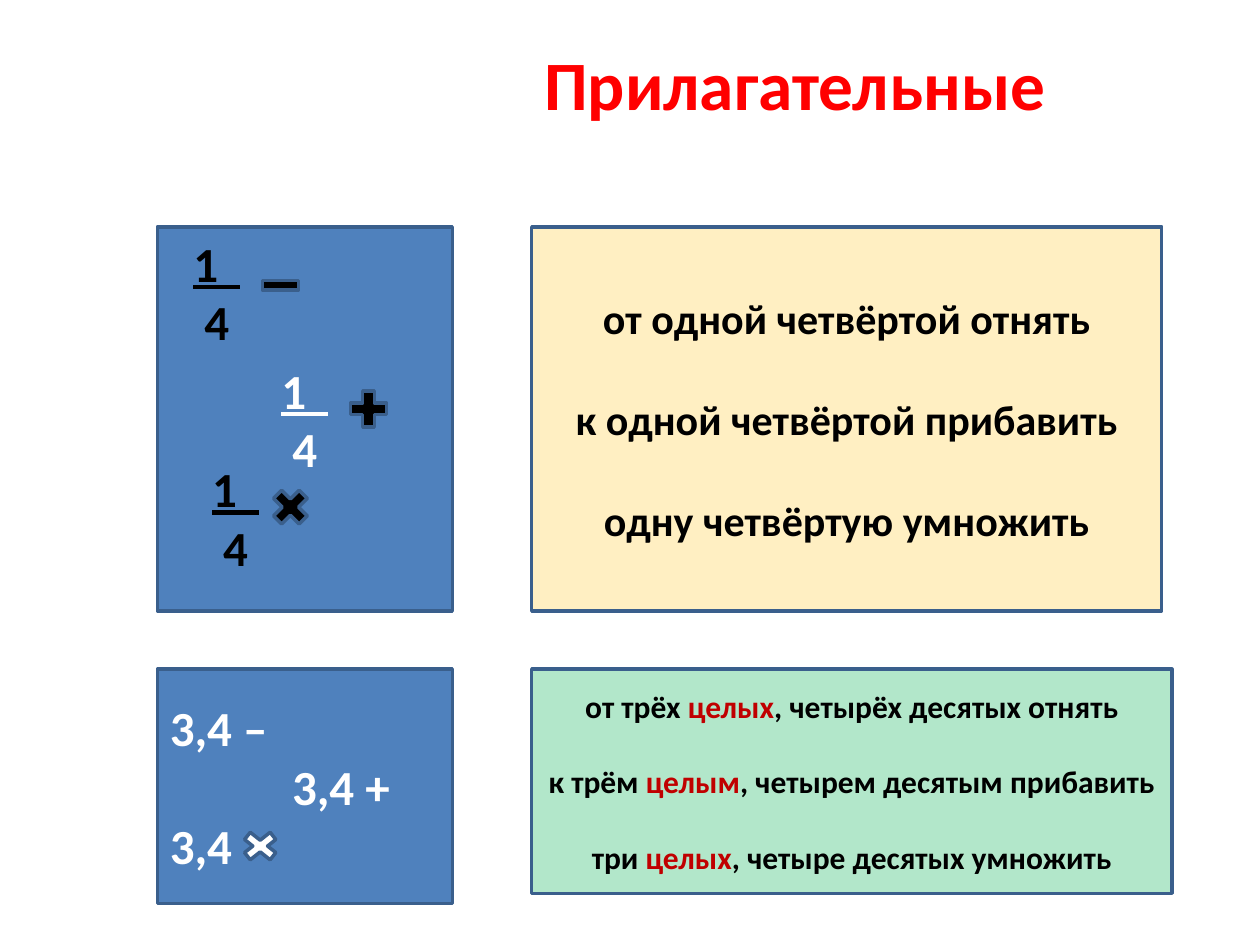
from dataclasses import dataclass

from lxml.etree import SubElement
from pptx import Presentation
from pptx.dml.color import RGBColor
from pptx.enum.shapes import MSO_SHAPE as Shape
from pptx.enum.text import MSO_ANCHOR as Anchor, PP_ALIGN as Align
from pptx.oxml.ns import qn
from pptx.util import Inches, Pt


@dataclass(frozen=True)
class Theme:
    """Colours, font and type sizes of the slide."""
    font: str = "Calibri"
    heading: str = "FF0000"
    panel: str = "4F81BD"
    outline: str = "3A5F8C"
    ink: str = "000000"
    light: str = "FFFFFF"
    accent: str = "C00000"
    fraction_tint: str = "FFC000"
    decimal_tint: str = "00B050"
    title_size: float = 39.6
    number_size: float = 28
    fraction_size: float = 24
    decimal_size: float = 18
    outline_width: float = 2


THEME = Theme()


def write(frame, lines, *, size, color, align=Align.CENTER, anchor=Anchor.MIDDLE,
          gap=0, underlined=(), indents=()):
    """Fill a frame with lines, each a list of texts or (text, colour) pairs."""
    frame.word_wrap = True
    frame.vertical_anchor = anchor
    for index, line in enumerate(lines):
        paragraph = frame.paragraphs[0] if index == 0 else frame.add_paragraph()
        paragraph.alignment = align
        paragraph.space_before = Pt(gap if index else 0)
        if index < len(indents):
            paragraph._p.get_or_add_pPr().set("marL", str(Inches(indents[index])))
        for part in line:
            text, tone = part if isinstance(part, tuple) else (part, color)
            run = paragraph.add_run()
            run.text = text
            font = run.font
            font.name, font.size, font.bold = THEME.font, Pt(size), True
            font.color.rgb = RGBColor.from_string(tone)
            if index in underlined:
                font.underline = True


def add_outlined(slide, kind, box, fill, opacity=100):
    """Add an outlined preset shape, translucent when opacity is below 100."""
    shape = slide.shapes.add_shape(kind, *map(Inches, box))
    shape.shadow.inherit = False
    shape.fill.solid()
    shape.fill.fore_color.rgb = RGBColor.from_string(fill)
    shape.line.color.rgb = RGBColor.from_string(THEME.outline)
    shape.line.width = Pt(THEME.outline_width)
    if opacity < 100:
        tint = shape.fill._xPr.find(".//" + qn("a:srgbClr"))
        SubElement(tint, qn("a:alpha")).set("val", str(opacity * 1000))
    return shape


def write_fraction(frame, color, anchor):
    """Write one quarter with an underlined numerator as the fraction bar."""
    write(frame, [["1  "], ["4"]], size=THEME.number_size, color=color,
          anchor=anchor, underlined=(0,))


def add_heading(slide, box):
    """Place the slide title."""
    title = slide.shapes.title
    title.left, title.top, title.width, title.height = map(Inches, box)
    write(title.text_frame, [["Прилагательные"]], size=THEME.title_size,
          color=THEME.heading, align=Align.LEFT)


def add_fraction_panel(slide, box):
    """Build the panel with three fractions and their operation signs."""
    left, top, width, height = box
    panel = add_outlined(slide, Shape.RECTANGLE, box, THEME.panel)
    write_fraction(panel.text_frame, THEME.light, Anchor.MIDDLE)
    for dx, dy, tall in ((0.08, 0, 1.51), (0.23, 1.79, 1.04)):
        fraction = slide.shapes.add_textbox(
            *map(Inches, (left + dx, top + dy, 0.78, tall)))
        write_fraction(fraction.text_frame, THEME.ink, Anchor.TOP)
    signs = (
        (Shape.MATH_MINUS, 0.78, 0.31, 0.31),
        (Shape.MATH_PLUS, 1.48, 1.25, 0.39),
        (Shape.MATH_MULTIPLY, 0.86, 2.03, 0.39),
    )
    for kind, dx, dy, tall in signs:
        add_outlined(slide, kind, (left + dx, top + dy, 0.39, tall), THEME.ink)


def add_decimal_panel(slide, box):
    """Build the panel with three decimals and their operation signs."""
    left, top, width, height = box
    panel = add_outlined(slide, Shape.RECTANGLE, box, THEME.panel)
    write(panel.text_frame, [["3,4 –"], ["3,4 +"], ["3,4"]],
          size=THEME.number_size, color=THEME.light, align=Align.LEFT,
          indents=(0, 0.97, 0))
    add_outlined(slide, Shape.MATH_MULTIPLY, (left + 0.62, top + 1.25, 0.39, 0.31),
                 THEME.light)


def add_reading_panel(slide, box, phrases, size, tint, opacity):
    """Build a tinted panel telling how the expressions are read aloud."""
    panel = add_outlined(slide, Shape.RECTANGLE, box, tint, opacity)
    write(panel.text_frame, phrases, size=size, color=THEME.ink, gap=size * 1.2)


def main():
    """Build the slide and save it."""
    deck = Presentation()
    deck.slide_width, deck.slide_height = Inches(10), Inches(7.5)
    slide = deck.slides.add_slide(deck.slide_layouts[5])

    numbers_left, readings_left = 1.25, 4.22
    fractions_top, decimals_top = 1.8, 5.31
    add_heading(slide, (readings_left, 0.3, 5.78, 0.72))
    add_fraction_panel(slide, (numbers_left, fractions_top, 2.34, 3.05))
    add_decimal_panel(slide, (numbers_left, decimals_top, 2.34, 1.86))

    fraction_phrases = [
        ["от одной четвёртой отнять"],
        ["к одной четвёртой прибавить"],
        ["одну четвёртую умножить"],
    ]
    decimal_phrases = [
        ["от трёх ", ("целых", THEME.accent), ", четырёх десятых отнять"],
        ["к трём ", ("целым", THEME.accent), ", четырем десятым прибавить"],
        ["три ", ("целых", THEME.accent), ", четыре десятых умножить"],
    ]
    add_reading_panel(slide, (readings_left, fractions_top, 5, 3.05),
                      fraction_phrases, THEME.fraction_size, THEME.fraction_tint, 24)
    add_reading_panel(slide, (readings_left, decimals_top, 5.08, 1.78),
                      decimal_phrases, THEME.decimal_size, THEME.decimal_tint, 30)
    deck.save("out.pptx")


if __name__ == "__main__":
    main()
